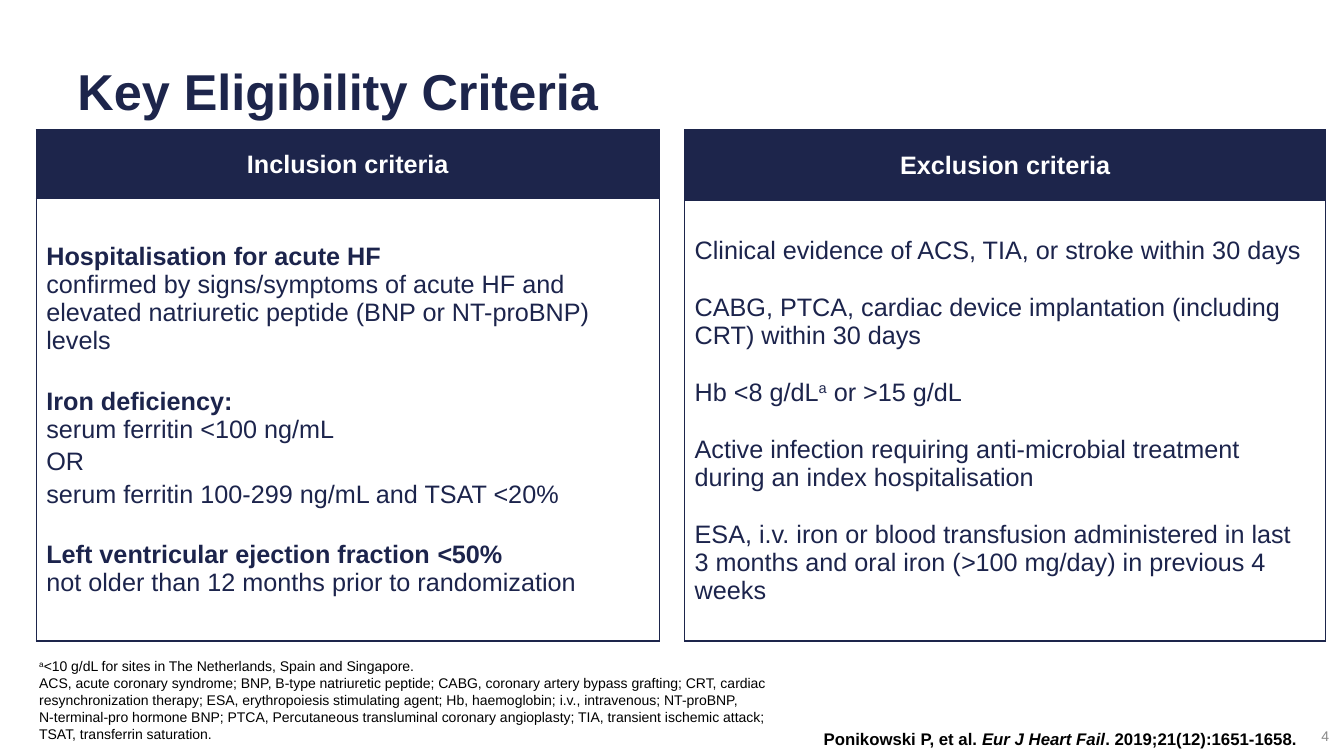
from lxml import etree
from pptx import Presentation
from pptx.dml.color import RGBColor
from pptx.enum import text
from pptx.oxml import ns
from pptx.util import Inches, Pt

NAVY = RGBColor(0x1D, 0x25, 0x4B)
BODY_NAVY = RGBColor(0x1C, 0x24, 0x4C)
WHITE = RGBColor(0xFF, 0xFF, 0xFF)
BLACK = RGBColor(0, 0, 0)
GREY = RGBColor(0x89, 0x89, 0x89)


def add_runs(paragraph, runs, size, color):
    """Add (text, style) runs; style letters: b bold, i italic, s superscript."""
    for words, style in runs:
        run = paragraph.add_run()
        run.text = words.rstrip("\n")
        run.font.name = "Arial"
        run.font.size = Pt(size)
        run.font.color.rgb = color
        run.font.bold = "b" in style
        run.font.italic = "i" in style
        if "s" in style:
            run.font._element.set("baseline", "30000")
        if words.endswith("\n"):
            paragraph.add_line_break()


def add_borders(cell):
    properties = cell._tc.get_or_add_tcPr()
    for side in ("lnL", "lnR", "lnT", "lnB"):
        line = etree.SubElement(properties, ns.qn(f"a:{side}"), w=str(Pt(1)))
        fill = etree.SubElement(line, ns.qn("a:solidFill"))
        etree.SubElement(fill, ns.qn("a:srgbClr"), val=str(NAVY))


presentation = Presentation()
presentation.slide_width = Inches(13.33)
presentation.slide_height = Inches(7.5)
slide = presentation.slides.add_slide(presentation.slide_layouts[6])

# Criteria tables: left, width, header height, heading, (space before, runs)
criteria = [
    (0.36, 6.18, 0.68, "Inclusion criteria", [
        (0, [("Hospitalisation for acute HF\n", "b"),
             ("confirmed by signs/symptoms of acute HF and elevated natriuretic "
              "peptide (BNP or NT-proBNP) levels", "")]),
        (23, [("Iron deficiency:\n", "b"), ("serum ferritin <100 ng/mL", "")]),
        (3, [("OR", "")]),
        (3, [("serum ferritin 100-299 ng/mL and TSAT <20%", "")]),
        (23, [("Left ventricular ejection fraction ", "b"), ("<", "bi"),
              ("50%\n", "b"),
              ("not older than 12 months prior to randomization", "")]),
    ]),
    (6.79, 6.36, 0.7, "Exclusion criteria", [
        (0, [("Clinical evidence of ACS, TIA, or stroke within 30 days", "")]),
        (20.5, [("CABG, PTCA, cardiac device implantation (including CRT) "
                 "within 30 days", "")]),
        (20.5, [("Hb <8 g/dL", ""), ("a", "s"), (" or >15 g/dL", "")]),
        (20.5, [("Active infection requiring anti-microbial treatment during "
                 "an index hospitalisation", "")]),
        (20.5, [("ESA, i.v. iron or blood transfusion administered in last\n", ""),
                ("3 months and oral iron (", ""), (">", "i"),
                ("100 mg/day) in previous 4 weeks", "")]),
    ]),
]
TABLE_HEIGHT = 5.07
for left, width, header_height, heading, items in criteria:
    table = slide.shapes.add_table(
        2, 1, Inches(left), Inches(1.29), Inches(width), Inches(TABLE_HEIGHT)).table
    table.horz_banding = False
    table.rows[0].height = Inches(header_height)
    table.rows[1].height = Inches(TABLE_HEIGHT - header_height)
    header, body = table.cell(0, 0), table.cell(1, 0)
    for cell, color in ((header, NAVY), (body, WHITE)):
        add_borders(cell)
        cell.fill.solid()
        cell.fill.fore_color.rgb = color
        cell.vertical_anchor = text.MSO_ANCHOR.MIDDLE
        cell.margin_left = cell.margin_right = Inches(0.1)
        cell.margin_top = cell.margin_bottom = Inches(0.07)

    paragraph = header.text_frame.paragraphs[0]
    paragraph.alignment = text.PP_ALIGN.CENTER
    add_runs(paragraph, [(heading, "b")], 18, WHITE)
    for index, (space_before, runs) in enumerate(items):
        frame = body.text_frame
        paragraph = frame.add_paragraph() if index else frame.paragraphs[0]
        if index:
            paragraph.space_before = Pt(space_before)
        add_runs(paragraph, runs, 18, BODY_NAVY)

# Text boxes: position, anchor, alignment, wrap, size, colour, paragraphs
LEFT, RIGHT = text.PP_ALIGN.LEFT, text.PP_ALIGN.RIGHT
TOP, MIDDLE, BOTTOM = (
    text.MSO_ANCHOR.TOP, text.MSO_ANCHOR.MIDDLE, text.MSO_ANCHOR.BOTTOM)
text_boxes = [
    ((0.67, 0.52, 12, 0.75), MIDDLE, LEFT, True, 36, NAVY,
     [[("Key Eligibility Criteria", "b")]]),
    ((0.29, 6.47, 7.78, 0.94), BOTTOM, LEFT, True, 10, BLACK,
     [[("a", "s"), ("<", "i"),
       ("10 g/dL for sites in The Netherlands, Spain and Singapore.", "")],
      [("ACS, acute coronary syndrome; BNP, B-type natriuretic peptide; CABG, "
        "coronary artery bypass grafting; CRT, cardiac resynchronization therapy; "
        "ESA, erythropoiesis stimulating agent; Hb, haemoglobin; i.v., "
        "intravenous; NT-proBNP,\n", ""),
       ("N-terminal-pro hormone BNP; PTCA, Percutaneous transluminal coronary "
        "angioplasty; TIA, transient ischemic attack; TSAT, transferrin "
        "saturation.", "")]]),
    ((12.05, 7.18, 1.23, 0.25), MIDDLE, RIGHT, True, 10, GREY, [[("4", "")]]),
    ((8.07, 7.18, 4.98, 0.3), TOP, LEFT, False, 12, BLACK,
     [[("Ponikowski P, et al. ", "b"), ("Eur J Heart Fail", "bi"),
       (". 2019;21(12):1651-1658.", "b")]]),
]
for position, anchor, alignment, wrap, size, color, paragraphs in text_boxes:
    frame = slide.shapes.add_textbox(*map(Inches, position)).text_frame
    frame.word_wrap = wrap
    frame.vertical_anchor = anchor
    for index, runs in enumerate(paragraphs):
        paragraph = frame.add_paragraph() if index else frame.paragraphs[0]
        paragraph.alignment = alignment
        add_runs(paragraph, runs, size, color)

presentation.save("out.pptx")
